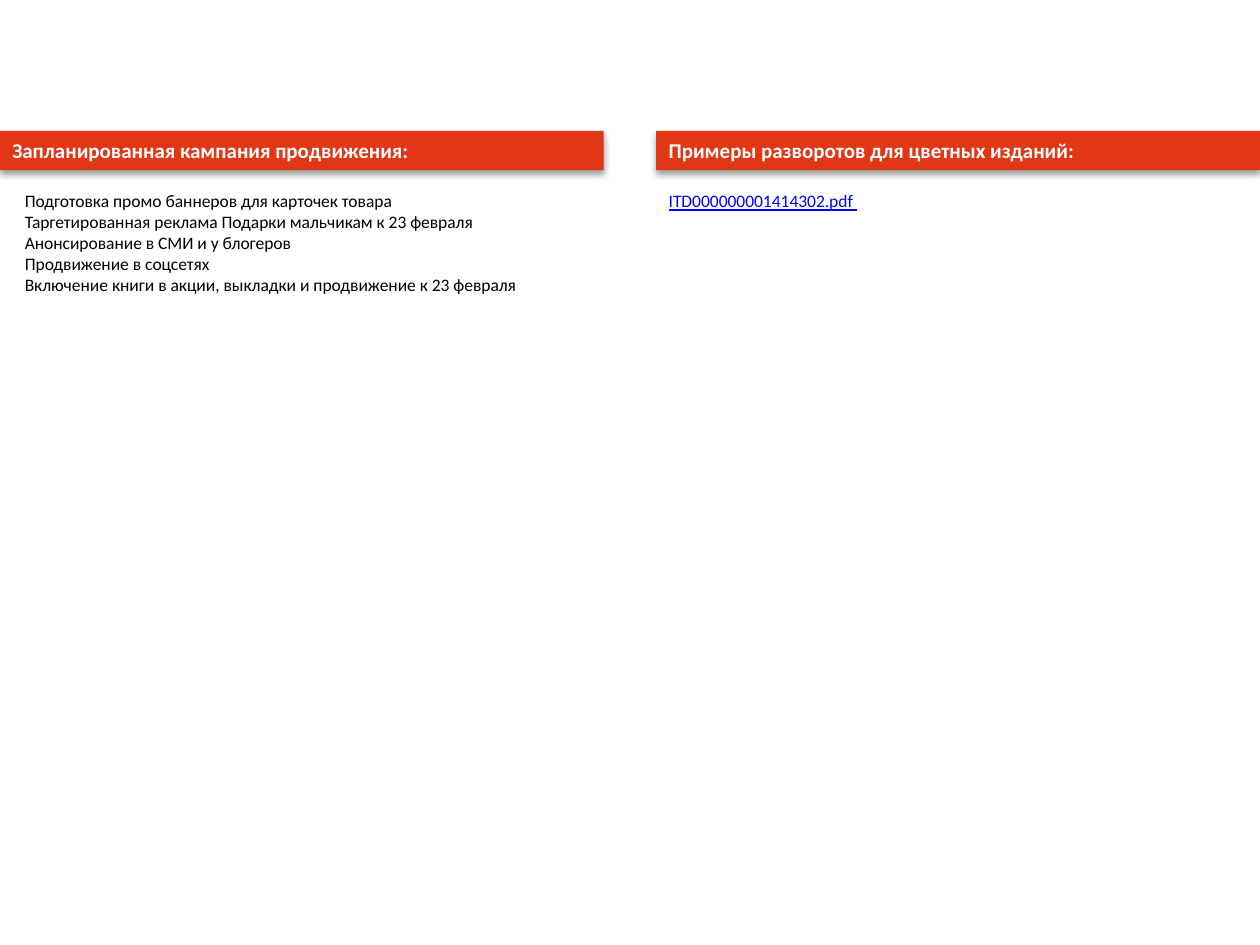
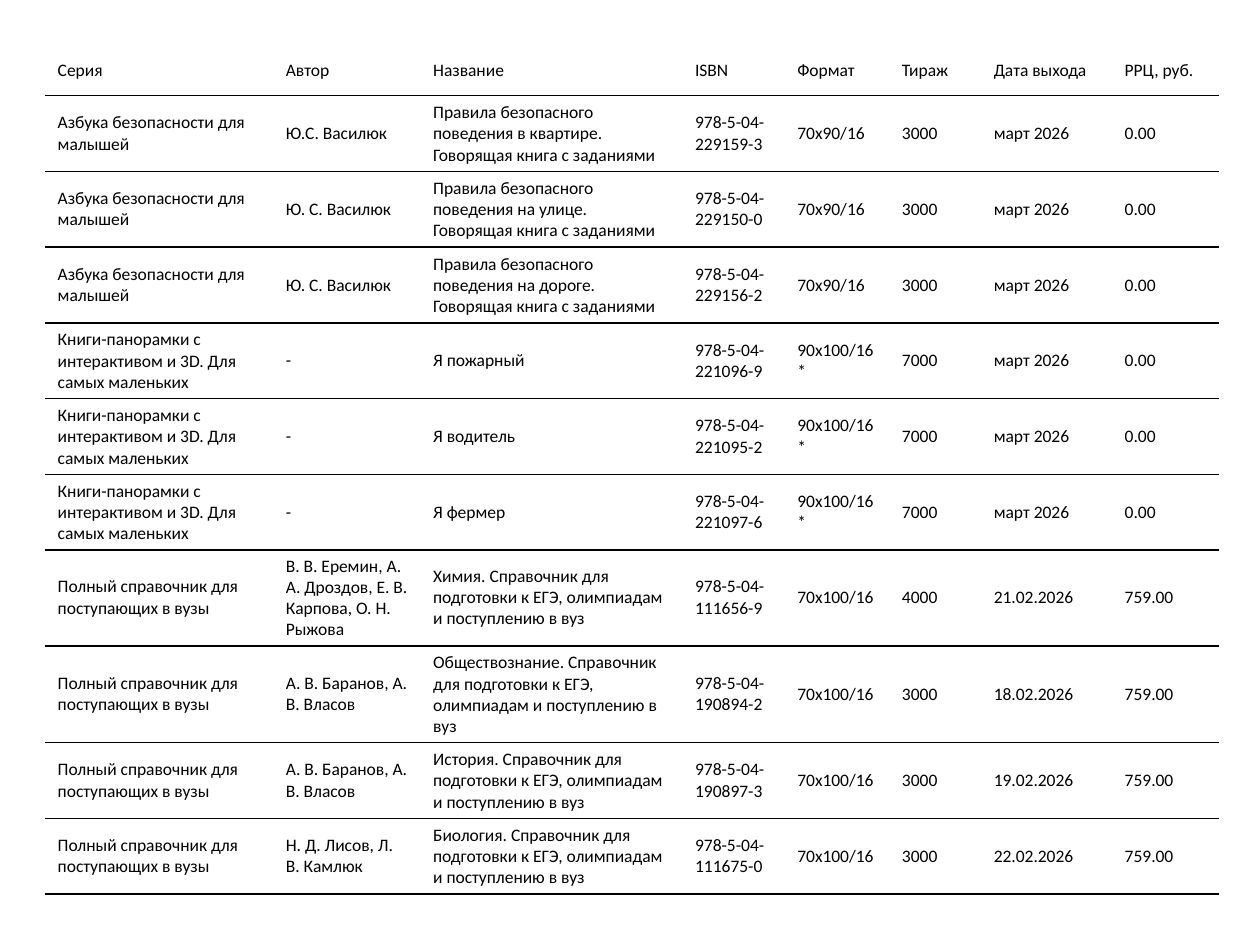
from dataclasses import dataclass

from lxml.etree import SubElement
from pptx import Presentation
from pptx.dml.color import RGBColor as RGB
from pptx.enum.shapes import MSO_SHAPE as SHAPE
from pptx.enum.text import MSO_ANCHOR as ANCHOR, MSO_AUTO_SIZE as FIT, PP_ALIGN as ALIGN
from pptx.oxml import parse_xml
from pptx.oxml.ns import nsdecls, qn
from pptx.util import Cm, Pt


@dataclass(frozen=True)
class Theme:
    font: str = "Calibri"
    band: RGB = RGB(0xE1, 0x37, 0x16)
    white: RGB = RGB(255, 255, 255)
    black: RGB = RGB(0, 0, 0)
    link: RGB = RGB(0, 0, 255)
    heading: Pt = Pt(12)
    body: Pt = Pt(10)
    rule: Pt = Pt(1)


theme = Theme()
NO_GRID_STYLE = "{2D5ABB26-0587-4C30-8999-92F81FD0307C}"


def write(tf, text, size, color, bold=False, underline=False):
    tf.text = text
    tf.word_wrap = True
    for p in tf.paragraphs:
        p.alignment = ALIGN.LEFT
        for r in p.runs:
            r.font.name, r.font.size, r.font.color.rgb = theme.font, size, color
            r.font.bold, r.font.underline = bold, underline


def add_shadow(sp):
    sp.shadow.inherit = False
    effects = sp.element.spPr.find(qn("a:effectLst"))
    shadow = SubElement(effects, qn("a:outerShdw"), blurRad=str(Pt(3.8)),
                        dist=str(Pt(2.2)), dir="5400000", rotWithShape="0")
    color = SubElement(shadow, qn("a:srgbClr"), val=str(theme.black))
    SubElement(color, qn("a:alpha"), val="40000")


prs = Presentation()
prs.slide_width, prs.slide_height = Cm(25.4), Cm(19.05)
blank = prs.slide_layouts[6]

# Slide 1: two headed columns
s = prs.slides.add_slide(blank)
band_width = Cm(12.17)
right = prs.slide_width - band_width
campaign = "\n".join([
    "Подготовка промо баннеров для карточек товара",
    "Таргетированная реклама Подарки мальчикам к 23 февраля",
    "Анонсирование в СМИ и у блогеров",
    "Продвижение в соцсетях",
    "Включение книги в акции, выкладки и продвижение к 23 февраля",
])
columns = [
    (0, "Запланированная кампания продвижения:", Cm(0.25), campaign, theme.black, False),
    (right, "Примеры разворотов для цветных изданий:", right,
     "ITD000000001414302.pdf ", theme.link, True),
]
for band_left, heading, body_left, body, color, underline in columns:
    # Heading band
    sp = s.shapes.add_shape(SHAPE.RECTANGLE, band_left, Cm(2.64), band_width, Cm(0.79))
    sp.fill.solid()
    sp.fill.fore_color.rgb = theme.band
    sp.line.fill.background()
    add_shadow(sp)
    write(sp.text_frame, heading, theme.heading, theme.white, bold=True)
    sp.text_frame.auto_size = FIT.SHAPE_TO_FIT_TEXT

    # Text below the band
    sp = s.shapes.add_textbox(body_left, Cm(3.71), Cm(11.91), Cm(2.64))
    write(sp.text_frame, body, theme.body, color, underline=underline)
    sp.text_frame.auto_size = FIT.SHAPE_TO_FIT_TEXT

# Slide 2: book list in two stacked tables
s = prs.slides.add_slide(blank)
col_widths = [4.6, 2.97, 5.28, 2.06, 2.11, 1.85, 2.64, 2.16]
row_height = Cm(1.02)

header = ["Серия", "Автор", "Название", "ISBN", "Формат", "Тираж", "Дата выхода", "РРЦ, руб."]
safety = [
    ["Азбука безопасности для малышей", author,
     f"Правила безопасного поведения {place}. Говорящая книга с заданиями",
     f"978-5-04-{isbn}", "70x90/16", "3000", "март 2026", "0.00"]
    for author, place, isbn in [
        ("Ю.С. Василюк", "в квартире", "229159-3"),
        ("Ю. С. Василюк", "на улице", "229150-0"),
        ("Ю. С. Василюк", "на дороге", "229156-2"),
    ]
]
panoramas = [
    ["Книги-панорамки с интерактивом и 3D. Для самых маленьких", "-", f"Я {job}",
     f"978-5-04-{isbn}", "90x100/16*", "7000", "март 2026", "0.00"]
    for job, isbn in [
        ("пожарный", "221096-9"), ("водитель", "221095-2"), ("фермер", "221097-6"),
    ]
]
handbooks = [
    ["Полный справочник для поступающих в вузы", authors,
     f"{subject}. Справочник для подготовки к ЕГЭ, олимпиадам и поступлению в вуз",
     f"978-5-04-{isbn}", "70x100/16", copies, f"{day}.02.2026", "759.00"]
    for authors, subject, isbn, copies, day in [
        ("В. В. Еремин, А. А. Дроздов, Е. В. Карпова, О. Н. Рыжова",
         "Химия", "111656-9", "4000", 21),
        ("А. В. Баранов, А. В. Власов", "Обществознание", "190894-2", "3000", 18),
        ("А. В. Баранов, А. В. Власов", "История", "190897-3", "3000", 19),
        ("Н. Д. Лисов, Л. В. Камлюк", "Биология", "111675-0", "3000", 22),
    ]
]

for top, rows in [(0.91, [header] + safety + panoramas), (11.07, handbooks)]:
    frame = s.shapes.add_table(len(rows), len(header), Cm(0.91), Cm(top),
                               Cm(sum(col_widths)), row_height * len(rows))
    frame.element.xpath(".//a:tableStyleId")[0].text = NO_GRID_STYLE
    table = frame.table
    table.first_row = table.horz_banding = False
    for column, width in zip(table.columns, col_widths):
        column.width = Cm(width)
    for row, texts in zip(table.rows, rows):
        row.height = row_height
        for cell, text in zip(row.cells, texts):
            write(cell.text_frame, text, theme.body, theme.black)
            cell.vertical_anchor = ANCHOR.MIDDLE
            cell.fill.background()
            # Rule under every row
            cell._tc.get_or_add_tcPr().insert(0, parse_xml(
                f'<a:lnB {nsdecls("a")} w="{theme.rule}"><a:solidFill>'
                f'<a:srgbClr val="{theme.black}"/></a:solidFill></a:lnB>'))

prs.save("out.pptx")
